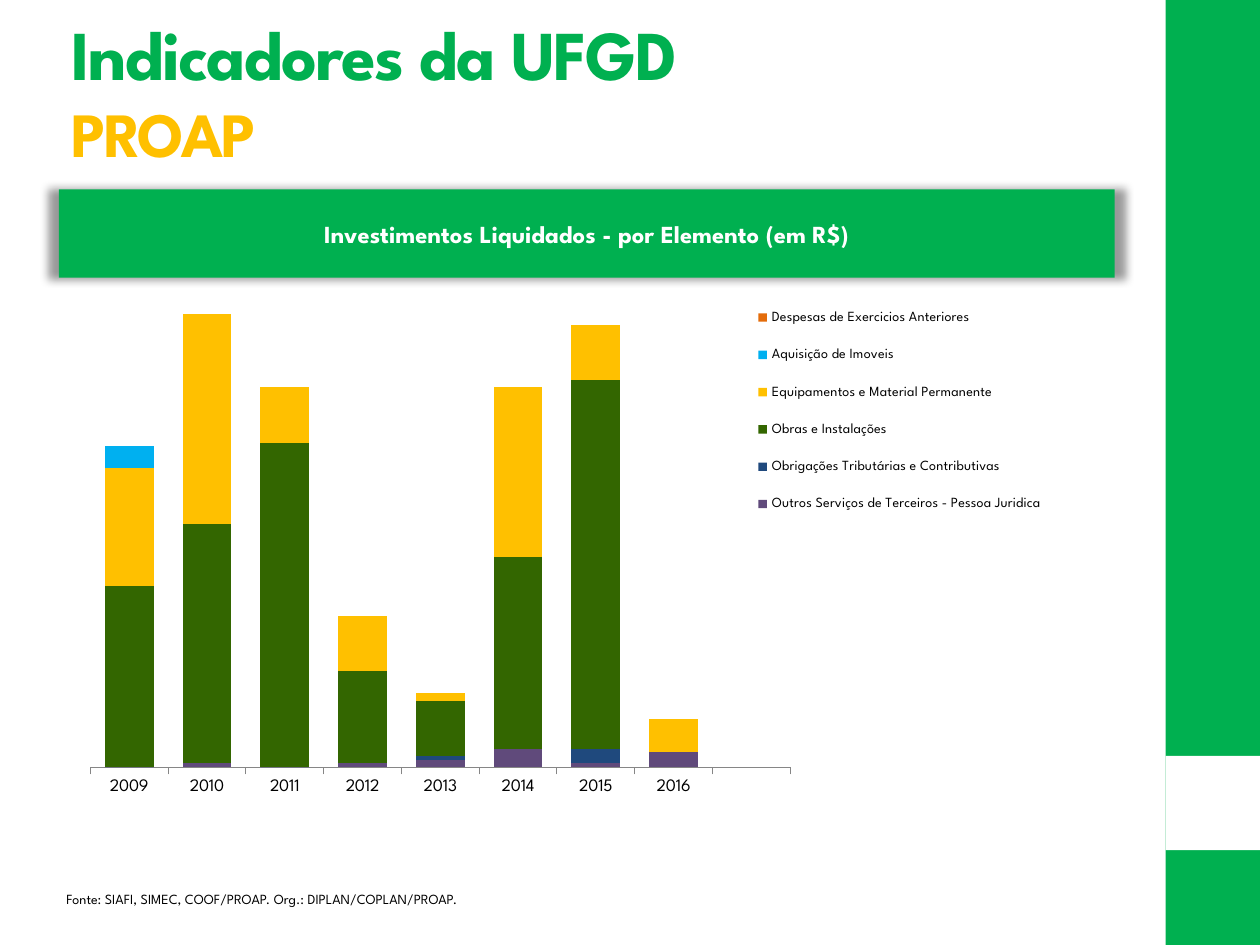
from lxml.etree import SubElement
from pptx import Presentation
from pptx.chart.data import CategoryChartData
from pptx.dml.color import RGBColor
from pptx.enum.chart import XL_CHART_TYPE, XL_LEGEND_POSITION, XL_TICK_LABEL_POSITION, XL_TICK_MARK
from pptx.enum.shapes import MSO_SHAPE
from pptx.enum.text import MSO_ANCHOR, MSO_AUTO_SIZE, PP_ALIGN
from pptx.oxml import parse_xml
from pptx.oxml.ns import nsdecls, qn
from pptx.util import Cm, Pt

GREEN = RGBColor(0x00, 0xB0, 0x50)
GOLD = RGBColor(0xFF, 0xC0, 0x00)
WHITE = RGBColor(0xFF, 0xFF, 0xFF)
BLACK = RGBColor(0x00, 0x00, 0x00)
GRAY = RGBColor(0x86, 0x86, 0x86)
PURPLE = RGBColor(0x60, 0x4A, 0x7B)
NAVY = RGBColor(0x1F, 0x49, 0x7D)
DARK_GREEN = RGBColor(0x33, 0x66, 0x00)
SKY_BLUE = RGBColor(0x00, 0xB0, 0xF0)
ORANGE = RGBColor(0xE4, 0x6C, 0x0A)
FONT_NAME = "League Spartan"

# The last category is an empty slot at the end of the axis
YEARS = [str(year) for year in range(2009, 2017)] + [""]
INVESTMENTS = [
    ("Outros Serviços de Terceiros - Pessoa Juridica", PURPLE, (0, 1, 0, 1, 2, 5, 1, 4)),
    ("Obrigações Tributárias e Contributivas", NAVY, (0, 0, 0, 0, 1, 0, 4, 0)),
    ("Obras e Instalações", DARK_GREEN, (49, 65, 88, 25, 15, 52, 100, 0)),
    ("Equipamentos e Material Permanente", GOLD, (32, 57, 15, 15, 2, 46, 15, 9)),
    ("Aquisição de Imoveis", SKY_BLUE, (6, 0, 0, 0, 0, 0, 0, 0)),
    ("Despesas de Exercicios Anteriores", ORANGE, (0, 0, 0, 0, 0, 0, 0, 0)),
]


def format_font(font, size, color, bold=False):
    for name, value in {"name": FONT_NAME, "size": Pt(size), "bold": bold}.items():
        setattr(font, name, value)
    font.color.rgb = color


def add_run(paragraph, text, size, color, bold=False):
    run = paragraph.add_run()
    run.text = text
    format_font(run.font, size, color, bold)
    return run


def add_rectangle(slide, left, top, width, height, color):
    shape = slide.shapes.add_shape(
        MSO_SHAPE.RECTANGLE, Cm(left), Cm(top), Cm(width), Cm(height))
    shape.shadow.inherit = False
    shape.fill.solid()
    shape.fill.fore_color.rgb = color
    shape.line.fill.background()
    return shape


def fill_title(slide):
    title = slide.shapes.title
    box = {"left": Cm(1.19), "top": Cm(0.23), "width": Cm(21.16), "height": Cm(3.18)}
    for name, value in box.items():
        setattr(title, name, value)
    frame = title.text_frame
    frame.auto_size = MSO_AUTO_SIZE.NONE
    frame.vertical_anchor = MSO_ANCHOR.MIDDLE
    paragraph = frame.paragraphs[0]
    paragraph.alignment = PP_ALIGN.LEFT
    runs = [add_run(paragraph, "Indicadores da UFGD", 40, GREEN, True)]
    paragraph.add_line_break()
    runs.append(add_run(paragraph, "PROAP", 36, GOLD, True))
    for run in runs:
        run.font._element.set("spc", "-100")


def add_banner(slide):
    banner = add_rectangle(slide, 1.19, 3.82, 21.28, 1.78, GREEN)
    # Soft glow-like shadow, slightly larger than the banner
    effects = banner._element.spPr.find(qn("a:effectLst"))
    effects.append(parse_xml(
        f'<a:outerShdw {nsdecls("a")} blurRad="63500" sx="102000" sy="102000" '
        'algn="ctr" rotWithShape="0"><a:srgbClr val="000000">'
        '<a:alpha val="40000"/></a:srgbClr></a:outerShdw>'))
    banner.text_frame.vertical_anchor = MSO_ANCHOR.MIDDLE
    paragraph = banner.text_frame.paragraphs[0]
    paragraph.alignment = PP_ALIGN.CENTER
    add_run(paragraph, "Investimentos Liquidados - por Elemento (em R$)", 14, WHITE, True)


def place_chart_part(element, left, top, width, height, inner=False):
    """Fix a chart part's place as fractions of the chart area."""
    layout = element.find(qn("c:layout"))
    if layout is None:
        layout = SubElement(element, qn("c:layout"))
        anchor = element.find(qn("c:legendPos"))
        if anchor is None:
            element.insert(0, layout)
        else:
            anchor.addnext(layout)
    manual = SubElement(layout, qn("c:manualLayout"))
    settings = {"layoutTarget": "inner"} if inner else {}
    settings.update(xMode="edge", yMode="edge", x=left, y=top, w=width, h=height)
    for name, value in settings.items():
        SubElement(manual, qn(f"c:{name}")).set("val", str(value))


def add_investment_chart(slide):
    data = CategoryChartData(number_format="#,##0.00")
    data.categories = YEARS
    for name, _, values in INVESTMENTS:
        data.add_series(name, values + (None,))
    chart = slide.shapes.add_chart(
        XL_CHART_TYPE.COLUMN_STACKED, Cm(1.4), Cm(5.57), Cm(21.06), Cm(10.64), data).chart
    chart.has_title = False
    format_font(chart.font, 10, BLACK)

    # Columns
    plot = chart.plots[0]
    for name, value in {"gap_width": 59, "overlap": 100, "vary_by_categories": False}.items():
        setattr(plot, name, value)
    for series, (_, color, _) in zip(plot.series, INVESTMENTS):
        series.format.fill.solid()
        series.format.fill.fore_color.rgb = color

    # Axes
    value_axis = chart.value_axis
    value_format = {"visible": False, "has_major_gridlines": False,
                    "minimum_scale": 0, "maximum_scale": 126}
    for name, value in value_format.items():
        setattr(value_axis, name, value)
    category_axis = chart.category_axis
    category_axis.major_tick_mark = XL_TICK_MARK.OUTSIDE
    category_axis.tick_label_position = XL_TICK_LABEL_POSITION.LOW
    category_axis.format.line.color.rgb = GRAY
    category_axis.format.line.width = Pt(0.5)

    # Legend
    chart.has_legend = True
    legend = chart.legend
    legend.position = XL_LEGEND_POSITION.RIGHT
    legend.include_in_layout = False
    format_font(legend.font, 8, BLACK)

    plot_area = chart._chartSpace.chart.plotArea
    place_chart_part(plot_area, 0.02, 0.05, 0.67, 0.88, inner=True)
    place_chart_part(legend._element, 0.62, 0.02, 0.35, 0.47)


def add_source_note(slide):
    note = slide.shapes.add_textbox(Cm(1.09), Cm(17.83), Cm(21.79), Cm(0.61))
    note.text_frame.word_wrap = True
    note.text_frame.auto_size = MSO_AUTO_SIZE.SHAPE_TO_FIT_TEXT
    add_run(note.text_frame.paragraphs[0],
            "Fonte: SIAFI, SIMEC, COOF/PROAP. Org.: DIPLAN/COPLAN/PROAP.", 8, BLACK)


def main():
    presentation = Presentation()
    presentation.slide_width = Cm(25.4)
    presentation.slide_height = Cm(19.05)
    slide = presentation.slides.add_slide(presentation.slide_layouts[5])

    # Side band with its white square
    add_rectangle(slide, 23.5, 0, 1.9, 19.05, GREEN)
    add_rectangle(slide, 23.5, 15.24, 1.9, 1.9, WHITE)

    fill_title(slide)
    add_banner(slide)
    add_investment_chart(slide)
    add_source_note(slide)
    presentation.save("out.pptx")


if __name__ == "__main__":
    main()
